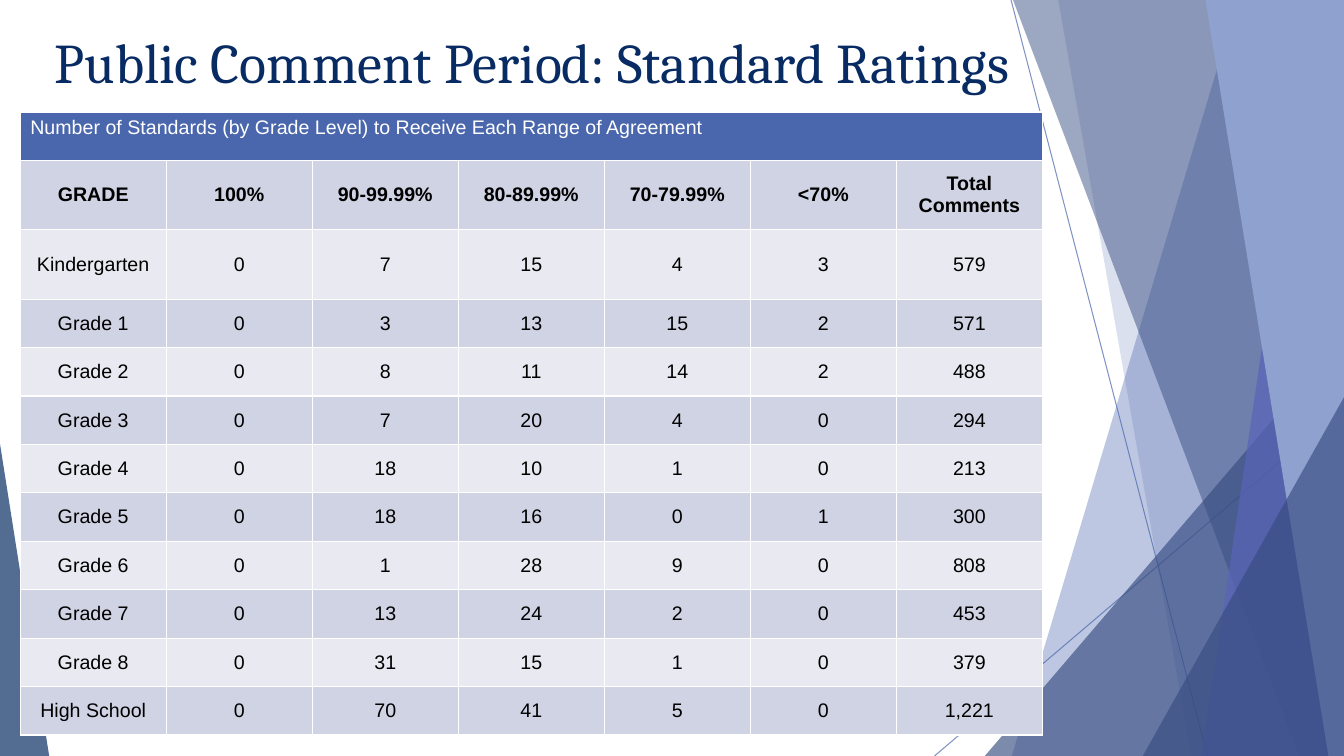
import lxml.etree
import pptx
import pptx.dml.color
import pptx.enum.shapes
import pptx.enum.text
import pptx.oxml.ns
import pptx.util

Cm = pptx.util.Cm
Pt = pptx.util.Pt
qn = pptx.oxml.ns.qn
ALIGN = pptx.enum.text.PP_ALIGN
MIDDLE = pptx.enum.text.MSO_ANCHOR.MIDDLE

WIDE, HIGH = 33.87, 19.05
BLUE, NAVY, DEEP = "4A66AC", "374C81", "072B62"
BANDS = ["E9EAF1", "D0D3E3"]

BANNER = "Number of Standards (by Grade Level) to Receive Each Range of Agreement"
ROWS = [
    ["GRADE", "100%", "90-99.99%", "80-89.99%", "70-79.99%", "<70%", "Total Comments"],
    ["Kindergarten", "0", "7", "15", "4", "3", "579"],
    ["Grade 1", "0", "3", "13", "15", "2", "571"],
    ["Grade 2", "0", "8", "11", "14", "2", "488"],
    ["Grade 3", "0", "7", "20", "4", "0", "294"],
    ["Grade 4", "0", "18", "10", "1", "0", "213"],
    ["Grade 5", "0", "18", "16", "0", "1", "300"],
    ["Grade 6", "0", "1", "28", "9", "0", "808"],
    ["Grade 7", "0", "13", "24", "2", "0", "453"],
    ["Grade 8", "0", "31", "15", "1", "0", "379"],
    ["High School", "0", "70", "41", "5", "0", "1,221"],
]


def paint(color, tone):
    color.rgb = pptx.dml.color.RGBColor.from_string(tone)


def fade(shape, share):
    for tint in shape._element.spPr.iter(qn("a:srgbClr")):
        alpha = lxml.etree.SubElement(tint, qn("a:alpha"))
        alpha.set("val", str(share * 1000))


def coat(shape, tone, share):
    shape.shadow.inherit = False
    shape.fill.solid()
    paint(shape.fill.fore_color, tone)
    shape.line.fill.background()
    if share < 100:
        fade(shape, share)


def add_ray(slide, *ends):
    kind = pptx.enum.shapes.MSO_CONNECTOR.STRAIGHT
    ray = slide.shapes.add_connector(kind, *map(Cm, ends))
    paint(ray.line.color, BLUE)
    ray.line.width = Pt(0.75)
    fade(ray, 69)
    lxml.etree.SubElement(ray._element.spPr, qn("a:effectLst"))


def add_shard(slide, top, foot, tone, share):
    pen = slide.shapes.build_freeform(Cm(top), 0)
    corners = [(WIDE, 0), (WIDE, HIGH), (foot, HIGH)]
    pen.add_line_segments([(Cm(x), Cm(y)) for x, y in corners])
    coat(pen.convert_to_shape(), tone, share)


def add_peak(slide, left, top, width, tip, tone, share):
    kind = pptx.enum.shapes.MSO_SHAPE.ISOSCELES_TRIANGLE
    peak = slide.shapes.add_shape(kind, Cm(left), Cm(top), Cm(width), Cm(HIGH - top))
    peak.adjustments[0] = tip
    coat(peak, tone, share)


def style(part, size, face, tone, bold=False):
    part.font.size = Pt(size)
    part.font.name = face
    part.font.bold = bold
    paint(part.font.color, tone)


def add_title(slide, text):
    box = slide.shapes.add_textbox(0, Cm(0.46), Cm(27.13), Cm(2.39))
    frame = box.text_frame
    frame.word_wrap = True
    frame.vertical_anchor = MIDDLE
    part = frame.paragraphs[0]
    part.text = text
    part.alignment = ALIGN.CENTER
    part.line_spacing = 0.9
    style(part, 40, "Cambria", DEEP)


def edge(cell):
    props = cell._tc.get_or_add_tcPr()
    for side in ("lnL", "lnR", "lnT", "lnB"):
        line = lxml.etree.SubElement(props, qn("a:" + side), w=str(Pt(1)))
        fill = lxml.etree.SubElement(line, qn("a:solidFill"))
        lxml.etree.SubElement(fill, qn("a:srgbClr"), val="FFFFFF")


def fill_cell(cell, text, back, tone, bold=False):
    edge(cell)
    cell.fill.solid()
    paint(cell.fill.fore_color, back)
    part = cell.text_frame.paragraphs[0]
    part.text = text
    style(part, 14, "Arial", tone, bold)
    return part


def add_grid(slide):
    count, span = len(ROWS) + 1, len(ROWS[0])
    frame = slide.shapes.add_table(
        count, span, Cm(0.51), Cm(2.82), Cm(3.68 * span), Cm(15.7))
    grid = frame.table
    grid.horz_banding = False
    for col in grid.columns:
        col.width = Cm(3.68)
    for r, row in enumerate(grid.rows):
        row.height = Cm(1.75 if r in (1, 2) else 1.22)
    grid.cell(0, 0).merge(grid.cell(0, span - 1))
    for c in range(span):
        fill_cell(grid.cell(0, c), "" if c else BANNER, BLUE, "FFFFFF")
    for r, row in enumerate(ROWS, 1):
        for c, text in enumerate(row):
            cell = grid.cell(r, c)
            part = fill_cell(cell, text, BANDS[r % 2], "000000", r == 1)
            part.alignment = ALIGN.CENTER
            cell.vertical_anchor = MIDDLE


def main():
    deck = pptx.Presentation()
    deck.slide_width, deck.slide_height = Cm(WIDE), Cm(HIGH)
    slide = deck.slides.add_slide(deck.slide_layouts[6])
    add_ray(slide, 25.48, 0, 30.43, HIGH)
    add_ray(slide, WIDE, 10.26, 23.55, HIGH)
    add_shard(slide, 31.19, 25.5, BLUE, 36)
    add_shard(slide, 26.67, 30.02, BLUE, 20)
    add_peak(slide, 24.82, 8.48, 9.05, 1, NAVY, 65)
    add_shard(slide, 25.53, 32.74, NAVY, 49)
    add_shard(slide, 33.1, 30.28, "5963B8", 69)
    add_shard(slide, 30.38, 33.48, "8FA1CF", 100)
    add_peak(slide, 28.8, 10.01, 5.07, 1, NAVY, 65)
    add_peak(slide, 0, 11.18, 1.24, 0, DEEP, 69)
    add_title(slide, "Public Comment Period: Standard Ratings ")
    add_grid(slide)
    deck.save("out.pptx")


if __name__ == "__main__":
    main()
